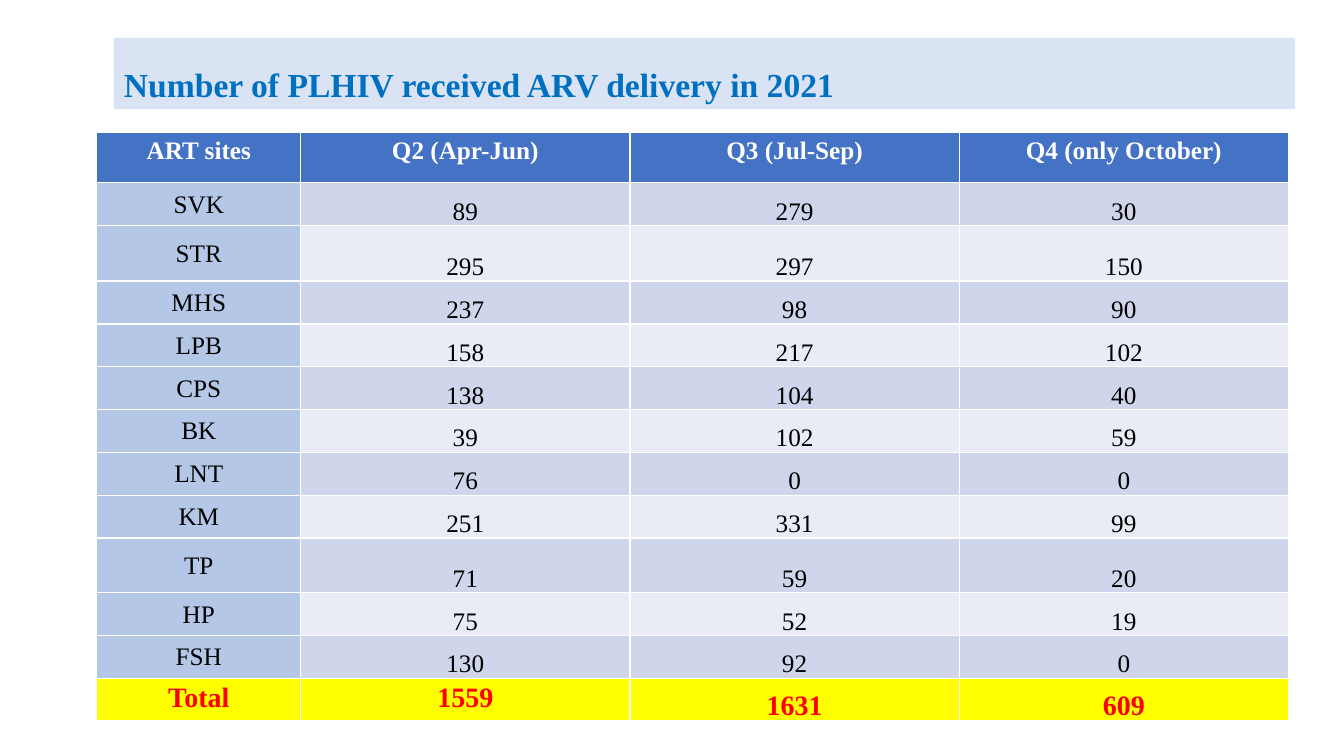
from dataclasses import dataclass
from typing import Any

from pptx import Presentation
from pptx.dml.color import RGBColor
from pptx.enum import shapes, text
from pptx.util import Pt

COLORS = {
    "title_band": "DAE3F3", "title_text": "0070C0",
    "header": "4472C4", "site": "B4C7E7",
    "band_dark": "CFD5EA", "band_light": "E9EBF5", "total": "FFFF00",
    "white": "FFFFFF", "black": "000000", "red": "FF0000",
}
FONT = "Times New Roman"
HEADINGS = ("ART sites", "Q2 (Apr-Jun)", "Q3 (Jul-Sep)", "Q4 (only October)")
DELIVERIES = (
    ("SVK", 89, 279, 30), ("STR", 295, 297, 150), ("MHS", 237, 98, 90),
    ("LPB", 158, 217, 102), ("CPS", 138, 104, 40), ("BK", 39, 102, 59),
    ("LNT", 76, 0, 0), ("KM", 251, 331, 99), ("TP", 71, 59, 20),
    ("HP", 75, 52, 19), ("FSH", 130, 92, 0),
)
TOTALS = ("Total", 1559, 1631, 609)
COLUMN_WIDTHS = (145.6, 235.2, 235.2, 235.2)
ROW_HEIGHT = 30.6
SPECIAL_HEIGHTS = {"ART sites": 36, "STR": 39.6, "TP": 39}

TIGHT_MARGINS = {"margin_left": Pt(0.7), "margin_right": Pt(0.7),
                 "margin_top": Pt(0.7), "margin_bottom": Pt(0)}
SPACED_MARGINS = {"margin_left": Pt(5), "margin_right": Pt(5),
                  "margin_top": Pt(0), "margin_bottom": Pt(0)}
SPACED = {**SPACED_MARGINS, "vertical_anchor": text.MSO_ANCHOR.TOP}
MIDDLE = {**TIGHT_MARGINS, "vertical_anchor": text.MSO_ANCHOR.MIDDLE}
BOTTOM = {**TIGHT_MARGINS, "vertical_anchor": text.MSO_ANCHOR.BOTTOM}


@dataclass(frozen=True)
class TextStyle:
    size: float
    color: str
    bold: bool = False
    align: text.PP_ALIGN = text.PP_ALIGN.CENTER


@dataclass(frozen=True)
class CellStyle:
    fill: str
    text: TextStyle
    frame: dict[str, Any]
    line_spacing: float = 1.0


TITLE_TEXT = TextStyle(24, "title_text", True, text.PP_ALIGN.LEFT)
HEADER_TEXT = TextStyle(18, "white", True)
BODY_TEXT = TextStyle(18, "black")
TOTAL_TEXT = TextStyle(20, "red", True)


def set_attributes(target: Any, values: dict[str, Any]) -> None:
    for name, value in values.items():
        setattr(target, name, value)


def fill_solid(target: Any, color: str) -> None:
    target.fill.solid()
    target.fill.fore_color.rgb = RGBColor.from_string(COLORS[color])


def write_text(frame: Any, words: str, style: TextStyle, line_spacing: float) -> None:
    paragraph = frame.paragraphs[0]
    set_attributes(paragraph, {"alignment": style.align, "line_spacing": line_spacing})
    run = paragraph.add_run()
    run.text = words
    set_attributes(run.font, {"name": FONT, "size": Pt(style.size), "bold": style.bold})
    run.font.color.rgb = RGBColor.from_string(COLORS[style.color])


def cell_style(row: int, column: int) -> CellStyle:
    if row == 0:
        return CellStyle("header", HEADER_TEXT, SPACED, 1.15)
    if row > len(DELIVERIES):
        if column < 2:
            return CellStyle("total", TOTAL_TEXT, SPACED, 1.15)
        return CellStyle("total", TOTAL_TEXT, BOTTOM)
    if column == 0:
        return CellStyle("site", BODY_TEXT, MIDDLE)
    return CellStyle("band_dark" if row % 2 else "band_light", BODY_TEXT, BOTTOM)


def add_title(slide: Any) -> None:
    shape = slide.shapes.add_shape(
        shapes.MSO_SHAPE.RECTANGLE, Pt(81.4), Pt(27), Pt(843.8), Pt(51))
    shape.shadow.inherit = False
    shape.line.fill.background()
    fill_solid(shape, "title_band")
    set_attributes(shape.text_frame, {
        "word_wrap": True, "vertical_anchor": text.MSO_ANCHOR.BOTTOM})
    write_text(shape.text_frame, "Number of PLHIV received ARV delivery in 2021",
               TITLE_TEXT, 1.5)


def add_delivery_table(slide: Any) -> None:
    rows = (HEADINGS, *DELIVERIES, TOTALS)
    heights = [SPECIAL_HEIGHTS.get(values[0], ROW_HEIGHT) for values in rows]
    table = slide.shapes.add_table(
        len(rows), len(HEADINGS), Pt(69.2), Pt(94.6),
        Pt(sum(COLUMN_WIDTHS)), Pt(sum(heights))).table
    for column, width in zip(table.columns, COLUMN_WIDTHS):
        column.width = Pt(width)
    for row_index, values in enumerate(rows):
        table.rows[row_index].height = Pt(heights[row_index])
        for column_index, value in enumerate(values):
            cell = table.cell(row_index, column_index)
            style = cell_style(row_index, column_index)
            set_attributes(cell, style.frame)
            fill_solid(cell, style.fill)
            write_text(cell.text_frame, str(value), style.text, style.line_spacing)


def main() -> None:
    """Build the slide of quarterly ARV deliveries per ART site."""
    presentation = Presentation()
    set_attributes(presentation, {"slide_width": Pt(960), "slide_height": Pt(540)})
    slide = presentation.slides.add_slide(presentation.slide_layouts[6])
    add_title(slide)
    add_delivery_table(slide)
    presentation.save("out.pptx")


if __name__ == "__main__":
    main()
